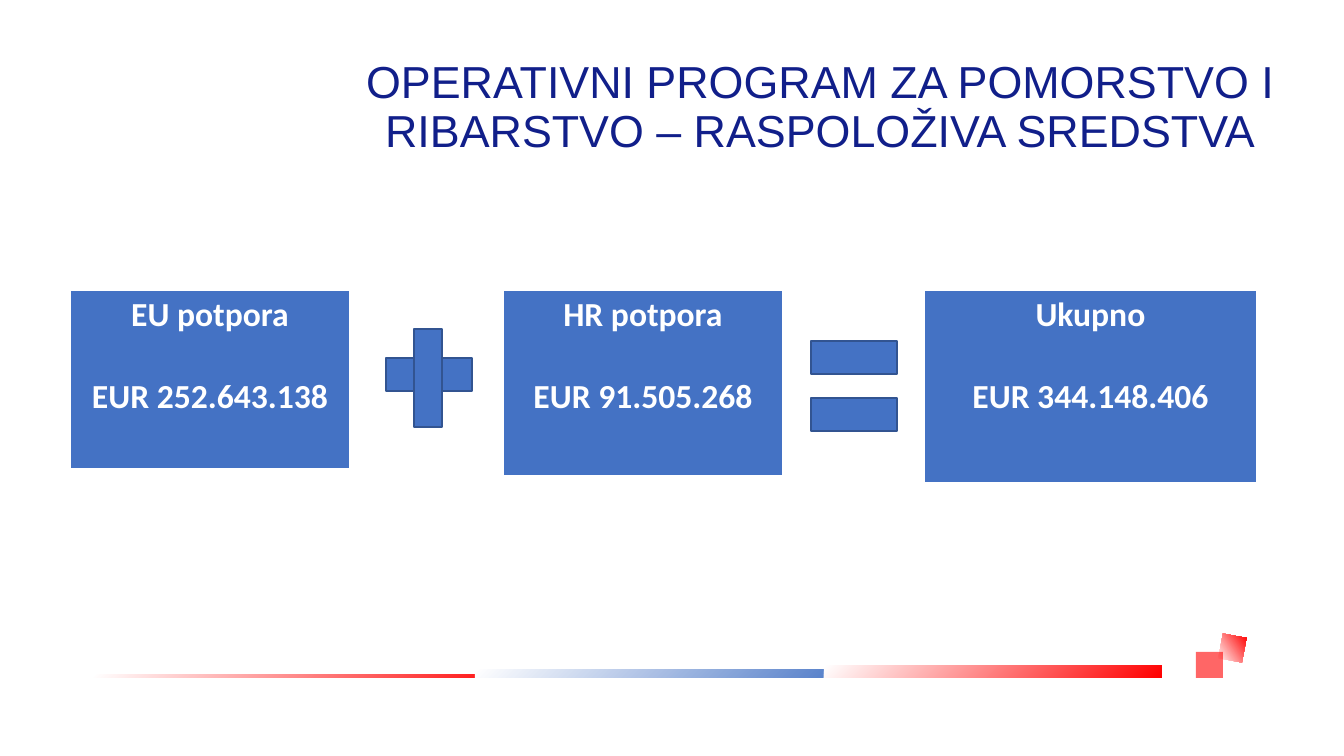
from lxml import etree
from pptx import Presentation
from pptx import util as u
from pptx.dml.color import RGBColor
from pptx.enum import shapes, text
from pptx.oxml.ns import qn

TITLE = "OPERATIVNI PROGRAM ZA POMORSTVO I RIBARSTVO – RASPOLOŽIVA SREDSTVA"
FUNDS = [
    ("EU potpora", "EUR 252.643.138", (70, 290, 280, 180)),
    ("HR potpora", "EUR 91.505.268", (503, 290, 280, 187)),
    ("Ukupno", "EUR 344.148.406", (924, 290, 333, 194)),
]
COLORS = {"white": "FFFFFF", "red": "FF0000", "blue": "4472C4",
          "edge": "325491", "title": "111F8A"}
TILT = (1220, 636, 25, 24)
SQUARE = (1196, 652, 27, 26)
BARS = [("red", (94, 674, 437, 4)), ("blue", (475, 670, 397, 8)),
        ("red", (824, 666, 338, 12))]
EQUALS = [(811, 398, 86, 33), (811, 341, 86, 33)]
PLUS = [((386, 358, 86, 33), 0), ((379, 364, 98, 28), 270)]
BORDERS = [("a:lnL", 1), ("a:lnR", 1), ("a:lnT", 1), ("a:lnB", 3)]


def px(*values):
    return [round(v * 914400 / 100.8) for v in values]


def rgb(name):
    return RGBColor.from_string(COLORS[name])


def add_text(p, words, font="Calibri", size=24, color="white", bold=False,
             before=None, spacing=None):
    p.alignment = text.PP_ALIGN.CENTER
    if before is not None:
        p.space_before = u.Pt(before)
    if spacing is not None:
        p.line_spacing = spacing
    r = p.add_run()
    r.text = words
    r.font.name, r.font.size, r.font.bold = font, u.Pt(size), bold
    r.font.color.rgb = rgb(color)


def add_rect(slide, box, color, edge=None, fade=False, alpha=None, turn=0):
    sp = slide.shapes.add_shape(shapes.MSO_SHAPE.RECTANGLE, *px(*box))
    sp.shadow.inherit = False
    sp.rotation = turn
    if fade:
        sp.fill.gradient()
        sp.fill.gradient_angle = 315
        for stop, name in zip(sp.fill.gradient_stops, ("white", color)):
            stop.color.rgb = rgb(name)
    else:
        sp.fill.solid()
        sp.fill.fore_color.rgb = rgb(color)
    if alpha:
        clr = sp._element.spPr.find(qn("a:solidFill"))[0]
        etree.SubElement(clr, qn("a:alpha")).set("val", str(alpha * 1000))
    if edge:
        sp.line.color.rgb = rgb(edge)
        sp.line.width = u.Pt(1)
    else:
        sp.line.fill.background()


def add_fund(slide, name, amount, box):
    table = slide.shapes.add_table(1, 1, *px(*box)).table
    table.first_row = table.horz_banding = False
    cell = table.cell(0, 0)
    cell.fill.solid()
    cell.fill.fore_color.rgb = rgb("blue")
    tcPr = cell._tc.get_or_add_tcPr()
    for i, (tag, width) in enumerate(BORDERS):
        ln = etree.Element(qn(tag), w=str(u.Pt(width)))
        fill = etree.SubElement(ln, qn("a:solidFill"))
        etree.SubElement(fill, qn("a:srgbClr")).set("val", COLORS["white"])
        tcPr.insert(i, ln)
    tf = cell.text_frame
    add_text(tf.paragraphs[0], name, bold=True)
    add_text(tf.add_paragraph(), amount, bold=True, before=29)


def main():
    prs = Presentation()
    prs.slide_width, prs.slide_height = px(1344, 756)
    slide = prs.slides.add_slide(prs.slide_layouts[6])

    add_rect(slide, TILT, "red", fade=True, turn=280.6)
    add_rect(slide, SQUARE, "red", alpha=60)
    for color, box in BARS:
        add_rect(slide, box, color, fade=True)

    tf = slide.shapes.add_textbox(*px(321, 15, 999, 187)).text_frame
    tf.word_wrap = True
    tf.vertical_anchor = text.MSO_ANCHOR.MIDDLE
    add_text(tf.paragraphs[0], TITLE, font="Arial", size=32, color="title",
             spacing=0.9)

    for fund in FUNDS:
        add_fund(slide, *fund)
    for box, turn in [(box, 0) for box in EQUALS] + PLUS:
        add_rect(slide, box, "blue", edge="edge", turn=turn)

    prs.save("out.pptx")


if __name__ == "__main__":
    main()
